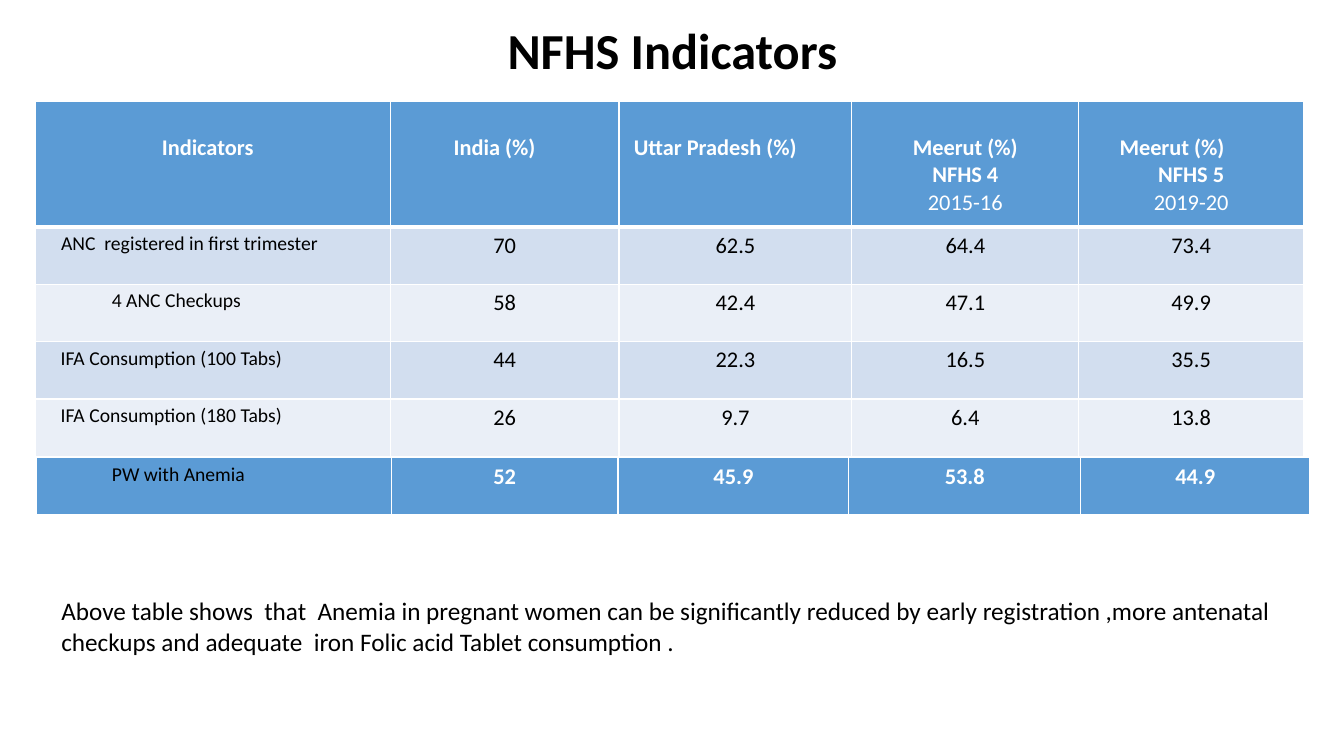
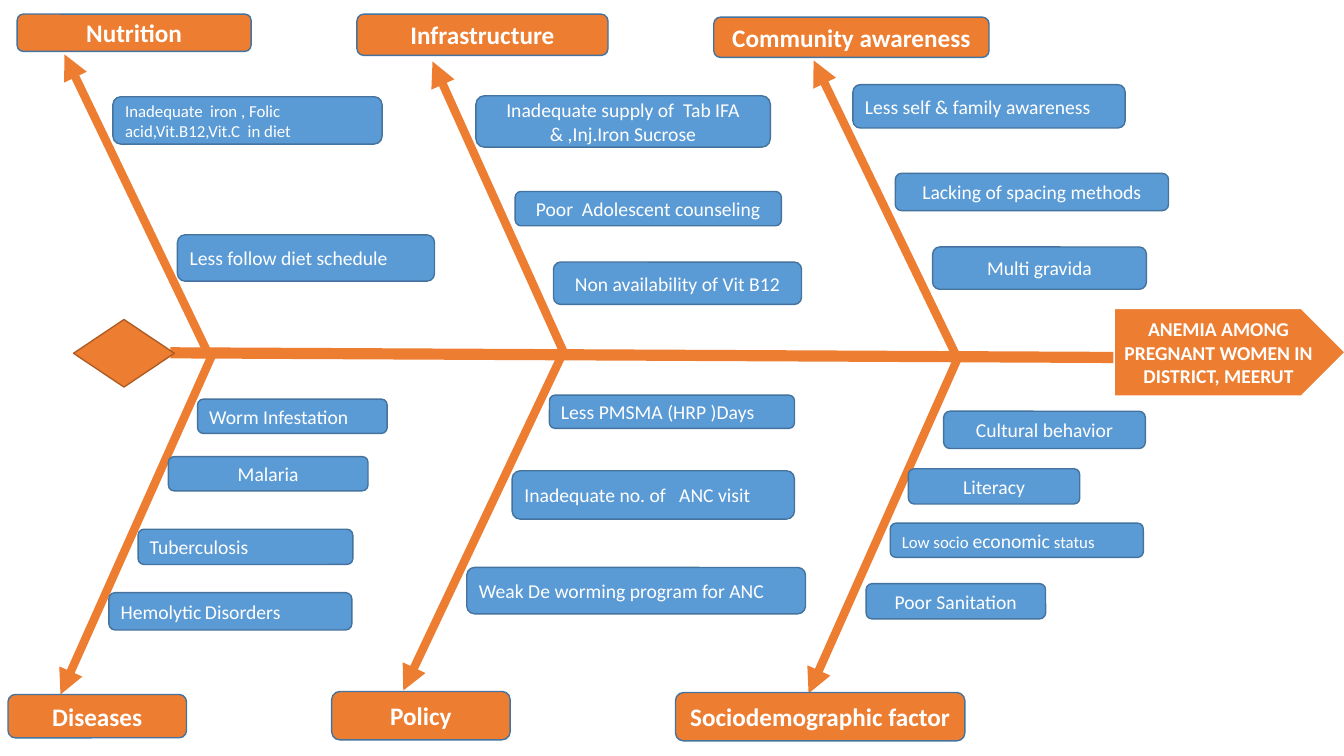
from lxml import etree
from pptx import Presentation
from pptx.dml.color import RGBColor
from pptx.enum.shapes import MSO_CONNECTOR, MSO_SHAPE
from pptx.enum.text import MSO_ANCHOR, MSO_AUTO_SIZE, PP_ALIGN
from pptx.oxml.ns import qn
from pptx.util import Inches, Pt

LEFT, CENTER = PP_ALIGN.LEFT, PP_ALIGN.CENTER
TOP, MIDDLE = MSO_ANCHOR.TOP, MSO_ANCHOR.MIDDLE
ROUNDED, PLATE, DIAMOND = MSO_SHAPE.ROUNDED_RECTANGLE, MSO_SHAPE.PENTAGON, MSO_SHAPE.DIAMOND
DECISION = MSO_SHAPE.FLOWCHART_DECISION
STRAIGHT = MSO_CONNECTOR.STRAIGHT
FONT = "Calibri"
COLORS = {
    "black": "000000", "white": "FFFFFF", "blue": "5B9BD5", "band": "D2DEEF",
    "pale": "EAEFF7", "orange": "ED7D31", "edge": "43739E", "rust": "AF5C24",
}
RGB = {name: RGBColor.from_string(value) for name, value in COLORS.items()}


def write(tf, text, size=14, color="white", bold=False, align=CENTER, anchor=MIDDLE):
    """Fill a frame; text is a string with line breaks or a list of (text, size) runs."""
    tf.word_wrap = True
    tf.vertical_anchor = anchor
    if isinstance(text, str):
        lines = [[(line, size)] for line in text.split("\n")]
    else:
        lines = [text]
    for i, runs in enumerate(lines):
        p = tf.paragraphs[0] if i == 0 else tf.add_paragraph()
        p.alignment = align
        for run_text, run_size in runs:
            r = p.add_run()
            r.text = run_text
            r.font.name, r.font.size, r.font.bold = FONT, Pt(run_size), bold
            r.font.color.rgb = RGB[color]


def add_box(slide, kind, box, fill, edge, text="", **fmt):
    sp = slide.shapes.add_shape(kind, *map(Inches, box))
    sp.shadow.inherit = False
    sp.fill.solid()
    sp.fill.fore_color.rgb = RGB[fill]
    sp.line.color.rgb = RGB[edge]
    sp.line.width = Pt(1)
    if text:
        write(sp.text_frame, text, **fmt)


prs = Presentation()
prs.slide_width, prs.slide_height = Inches(13.33), Inches(7.5)

# Indicator tables
s = prs.slides.add_slide(prs.slide_layouts[5])
title = s.shapes.title
title.left, title.top, title.width, title.height = map(Inches, (0.92, 0.14, 11.5, 0.77))
write(title.text_frame, "NFHS Indicators", size=36, color="black", bold=True)
title.text_frame.auto_size = MSO_AUTO_SIZE.NONE
title.text_frame.paragraphs[0].line_spacing = 0.9

indicator_rows = [
    ["Indicators", "India (%)", "Uttar Pradesh (%)",
     "Meerut (%)\nNFHS 4\n2015-16", "Meerut (%)\nNFHS 5\n2019-20"],
    ["ANC  registered in first trimester", "70", "62.5", "64.4", "73.4"],
    ["4 ANC Checkups", "58", "42.4", "47.1", "49.9"],
    ["IFA Consumption (100 Tabs)", "44", "22.3", "16.5", "35.5"],
    ["IFA Consumption (180 Tabs)", "26", "9.7", "6.4", "13.8"],
]
anemia_rows = [["PW with Anemia", "52", "45.9", "53.8", "44.9"]]
# Extra right margin that moves a centred text to the left
NUDGE = {
    "Indicators": 0.1, "India (%)": 0.2, "Uttar Pradesh (%)": 0.4,
    indicator_rows[0][4]: 0.38, "ANC  registered in first trimester": 0.46,
    "4 ANC Checkups": 0.72, "PW with Anemia": 0.7,
    "IFA Consumption (100 Tabs)": 0.82, "IFA Consumption (180 Tabs)": 0.82,
}
tables = [
    (indicator_rows, 0.35, 1.01, [3.52, 2.27, 2.31, 2.25, 2.23], [1.24] + [0.57] * 4,
     ["blue", "band", "pale", "band", "pale"]),
    (anemia_rows, 0.36, 4.54, [3.52, 2.25, 2.29, 2.3, 2.27], [0.57], ["blue"]),
]
for rows, left, top, widths, heights, fills in tables:
    frame = s.shapes.add_table(len(rows), len(widths), Inches(left), Inches(top),
                               Inches(sum(widths)), Inches(sum(heights)))
    table = frame.table
    for column, width in zip(table.columns, widths):
        column.width = Inches(width)
    for i, (texts, height, fill) in enumerate(zip(rows, heights, fills)):
        table.rows[i].height = Inches(height)
        header = len(texts[1]) > 2
        for j, text in enumerate(texts):
            cell = table.cell(i, j)
            label = j == 0 and not header
            strong = fill == "blue" and not label
            write(cell.text_frame, text, size=14 if label else 16, bold=strong,
                  color="white" if strong else "black", anchor=TOP)
            cell.vertical_anchor = TOP
            cell.margin_right = Inches(0.1 + NUDGE.get(text, 0))
            if header:
                cell.margin_top = Inches(0.32)
                if j > 2:
                    cell.text_frame.paragraphs[2].runs[0].font.bold = False
                for p in cell.text_frame.paragraphs[1:]:
                    p._p.get_or_add_pPr().set("marL", str(Inches(NUDGE.get(text, 0))))
            tcPr = cell._tc.get_or_add_tcPr()
            for side in ("lnL", "lnR", "lnT", "lnB"):
                weight = 3 if header and side == "lnB" else 1
                ln = etree.SubElement(tcPr, qn("a:" + side), w=str(Pt(weight)))
                solid = etree.SubElement(ln, qn("a:solidFill"))
                etree.SubElement(solid, qn("a:srgbClr"), val=COLORS["white"])
            cell.fill.solid()
            cell.fill.fore_color.rgb = RGB[fill]

note = s.shapes.add_textbox(*map(Inches, (0.51, 5.86, 12.37, 0.71)))
write(note.text_frame, "Above table shows  that  Anemia in pregnant women can be significantly "
      "reduced by early registration ,more antenatal checkups and adequate  iron Folic acid "
      "Tablet consumption .", size=18, color="black", align=LEFT, anchor=TOP)

# Fishbone diagram
s = prs.slides.add_slide(prs.slide_layouts[6])
bones = [
    (1.69, 3.5, 11.79, 3.55, 8),
    (2.1, 3.53, 0.6, 6.89, 6), (2.08, 3.54, 0.64, 0.54, 6),
    (5.57, 3.53, 4, 6.85, 6), (5.62, 3.56, 4.29, 0.61, 6),
    (9.51, 3.53, 8.02, 6.88, 6), (9.48, 3.52, 8.07, 0.6, 6),
]
for *ends, weight in bones:
    bone = s.shapes.add_connector(STRAIGHT, *map(Inches, ends))
    bone.line.color.rgb = RGB["orange"]
    bone.line.width = Pt(weight)
    etree.SubElement(bone.line._get_or_add_ln(), qn("a:tailEnd"), type="triangle")
    etree.SubElement(bone._element.spPr, qn("a:effectLst"))

add_box(s, PLATE, (11.05, 3.06, 2.29, 0.87), "orange", "white",
        "ANEMIA AMONG PREGNANT WOMEN IN DISTRICT, MEERUT", bold=True)
add_box(s, DECISION, (0.73, 3.17, 1, 0.67), "orange", "rust")

categories = [
    ("Nutrition", 0.17, 0.14, 2.32, 0.37),
    ("Infrastructure", 3.54, 0.14, 2.49, 0.41),
    ("Community awareness", 7.08, 0.17, 2.73, 0.4),
    ("Diseases", 0.08, 6.89, 1.77, 0.43),
    ("Policy", 3.29, 6.86, 1.77, 0.48),
    ("Sociodemographic factor", 6.7, 6.87, 2.87, 0.48),
]
for text, *box in categories:
    add_box(s, ROUNDED, box, "orange", "edge", text, size=18, bold=True)

causes = [
    ([("Inadequate  iron , Folic acid,Vit.B12,Vit.C  in diet", 12)], LEFT, 1.12, 0.96, 2.67, 0.47),
    ("Less follow diet schedule", LEFT, 1.76, 2.33, 2.55, 0.46),
    ("Inadequate supply of  Tab IFA & ,Inj.Iron Sucrose", CENTER, 4.72, 0.95, 2.92, 0.51),
    ("Poor  Adolescent counseling", CENTER, 5.11, 1.9, 2.64, 0.34),
    ("Non availability of Vit B12", CENTER, 5.49, 2.6, 2.46, 0.42),
    ("Less self & family awareness", LEFT, 8.46, 0.84, 2.7, 0.43),
    ("Lacking of spacing methods", CENTER, 8.88, 1.72, 2.71, 0.37),
    ("Multi gravida", CENTER, 9.25, 2.45, 2.12, 0.42),
    ("Worm Infestation", LEFT, 1.96, 3.96, 1.88, 0.34),
    ("Malaria", CENTER, 1.67, 4.53, 1.98, 0.34),
    ("Tuberculosis", LEFT, 1.37, 5.25, 2.13, 0.35),
    ([("Hemolytic", 14), (" ", 11), ("Disorders", 14)], LEFT, 1.08, 5.88, 2.41, 0.37),
    ("Less PMSMA (HRP )Days", LEFT, 5.45, 3.92, 2.43, 0.33),
    ("Inadequate no. of   ANC visit", LEFT, 5.08, 4.67, 2.8, 0.48),
    ("Weak De worming program for ANC", LEFT, 4.63, 5.63, 3.36, 0.46),
    ("Cultural behavior", CENTER, 9.36, 4.08, 2, 0.37),
    ("Literacy", CENTER, 9.01, 4.65, 1.7, 0.35),
    ([("Low socio ", 12), ("economic", 14), (" status", 12)], LEFT, 8.83, 5.19, 2.51, 0.34),
    ("Poor Sanitation", CENTER, 8.59, 5.79, 1.78, 0.35),
]
for text, align, *box in causes:
    add_box(s, ROUNDED, box, "blue", "edge", text, align=align)

prs.save("out.pptx")
